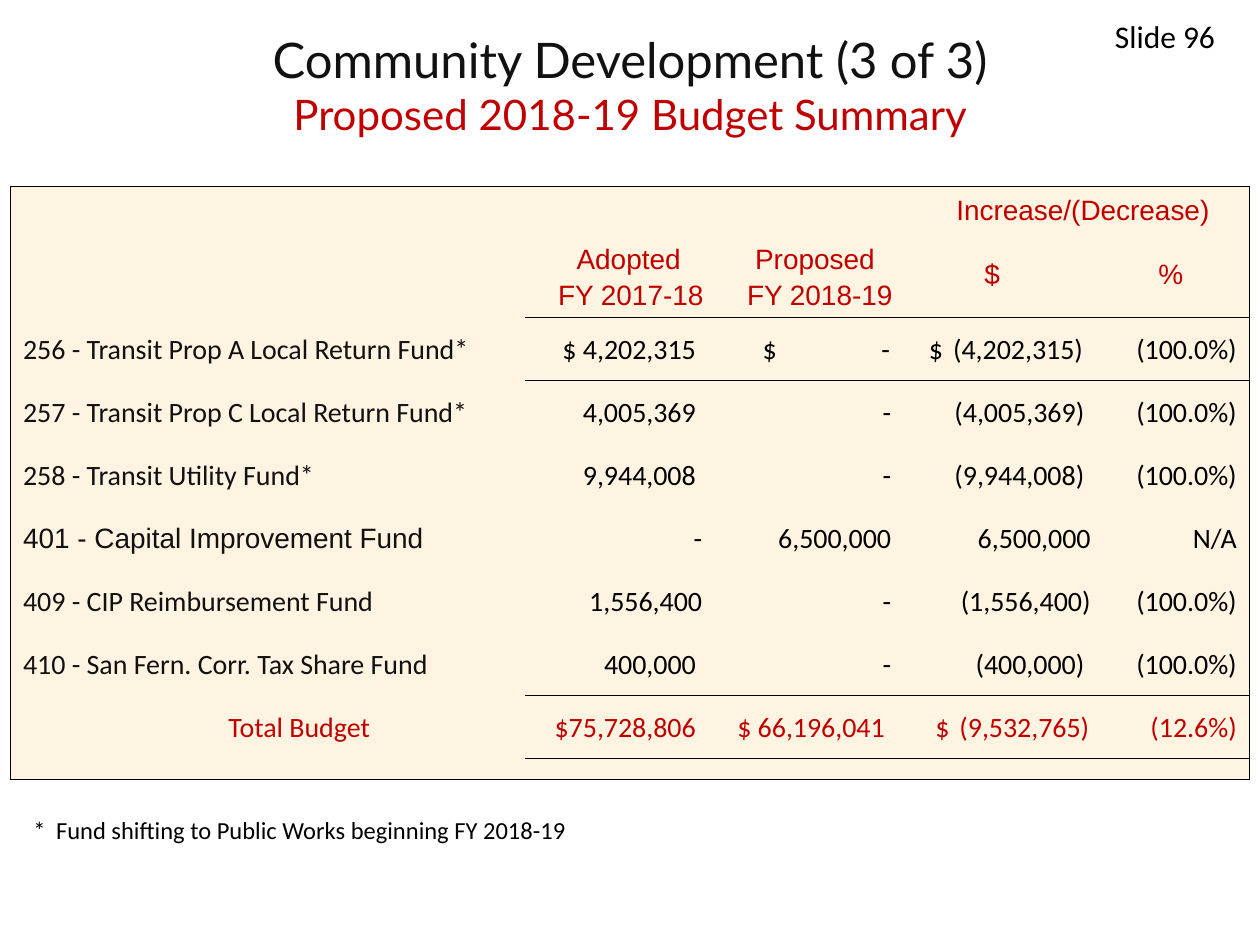
from dataclasses import dataclass

from lxml import etree
from pptx import Presentation, util as u
from pptx.dml.color import RGBColor
from pptx.enum import text
from pptx.oxml.ns import qn

AL = text.PP_ALIGN
MID, BOTTOM = text.MSO_ANCHOR.MIDDLE, text.MSO_ANCHOR.BOTTOM
NO_STYLE = "{2D5ABB26-0587-4C30-8999-92F81FD0307C}"


@dataclass(frozen=True)
class Theme:
    """Colours, fonts and type sizes of the slide."""
    ink: str = "111111"
    black: str = "000000"
    accent: str = "C00000"
    panel: str = "FFF3E1"
    head: str = "Lato"
    label: str = "Arial"
    body: str = "Calibri"
    title: int = 28
    subtitle: int = 24
    page: int = 18
    cell: int = 16
    note: int = 14
    spacer: int = 8


T = Theme()
COLS = [49, 17, 18, 19, 15]
ROWS = [4.4, 4.8] + [6] * 7 + [2]
RULED = {1, 7, 8}
FUNDS = [
    ("256 - Transit Prop A Local Return Fund*", "$ 4,202,315 ", "$\t-", "$\t(4,202,315) ", "(100.0%)"),
    ("257 - Transit Prop C Local Return Fund*", "4,005,369 ", "-", "(4,005,369) ", "(100.0%)"),
    ("258 - Transit Utility Fund*", "9,944,008 ", "-", "(9,944,008) ", "(100.0%)"),
    ("401 - Capital Improvement Fund", "-", "6,500,000", "6,500,000", "N/A"),
    ("409 - CIP Reimbursement Fund", "1,556,400", "-", "(1,556,400)", "(100.0%)"),
    ("410 - San Fern. Corr. Tax Share Fund", "400,000 ", "-", "(400,000) ", "(100.0%)"),
]
TOTAL = ("Total Budget", "$75,728,806 ", "$ 66,196,041 ", "$\t(9,532,765)", "(12.6%)")
SIGN_INSET = {(2, 2): 0.47, (2, 3): 0.29, (8, 3): 0.34}


def grid(n):
    """Length of n grid units, twelve to the inch."""
    return u.Emu(round(n * 76200))


def add_run(p, words, size, font, color):
    """Add one formatted run."""
    r = p.add_run()
    r.text = words
    r.font.size, r.font.name = u.Pt(size), font
    r.font.color.rgb = RGBColor.from_string(color)


def indent(p, left, first=0):
    """Indent a paragraph, in inches."""
    pPr = p._p.get_or_add_pPr()
    pPr.set("marL", str(u.Inches(left)))
    pPr.set("indent", str(u.Inches(first)))


def add_tab(p, pos, align):
    """Give a paragraph one tab stop, in inches."""
    tabs = etree.SubElement(p._p.get_or_add_pPr(), qn("a:tabLst"))
    etree.SubElement(tabs, qn("a:tab"), pos=str(u.Inches(pos)), algn=align)


def add_box(s, x, y, w, h):
    """Add a wrapping text box on the grid and return its frame."""
    tf = s.shapes.add_textbox(*map(grid, (x, y, w, h))).text_frame
    tf.word_wrap = True
    return tf


def set_insets(cell, *inches):
    """Set the left, top, right and bottom insets of a cell."""
    (cell.margin_left, cell.margin_top,
     cell.margin_right, cell.margin_bottom) = map(u.Inches, inches)


def set_borders(cell, sides):
    """Rule the named sides of a cell."""
    tcPr = cell._tc.get_or_add_tcPr()
    for side in sides:
        ln = etree.SubElement(tcPr, qn(f"a:ln{side}"), w="12700")
        fill = etree.SubElement(ln, qn("a:solidFill"))
        etree.SubElement(fill, qn("a:srgbClr"), val=T.black)


def style_cell(cell, i, j):
    """Fill a cell and rule it according to its place."""
    last, right = i + cell.span_height - 1, j + cell.span_width - 1
    rules = {"L": j == 0,
             "R": right == len(COLS) - 1,
             "T": i == 0 or (j > 0 and i - 1 in RULED),
             "B": last == len(ROWS) - 1 or (j > 0 and last in RULED)}
    set_borders(cell, [side for side, on in rules.items() if on])
    cell.fill.solid()
    cell.fill.fore_color.rgb = RGBColor.from_string(T.panel)


def add_headings(tbl):
    """Write the two header rows."""
    for j, (word, year) in enumerate([("Adopted", "FY 2017-18"), ("Proposed", "FY 2018-19")], 1):
        cell = tbl.cell(0, j)
        cell.vertical_anchor = BOTTOM
        set_insets(cell, 0.1, 0.05, 0, 0.05)
        p, q = cell.text_frame.paragraphs[0], cell.text_frame.add_paragraph()
        indent(p, 0.31)
        q.alignment, q.space_before = AL.RIGHT, u.Pt(3)
        add_run(p, word, T.cell, T.label, T.accent)
        add_run(q, year, T.cell, T.label, T.accent)
    for i, j, words, left in [(0, 3, "Increase/(Decrease)", 0.19), (1, 3, "$", 0), (1, 4, "%", 0)]:
        cell = tbl.cell(i, j)
        cell.vertical_anchor = MID if i else BOTTOM
        p = cell.text_frame.paragraphs[0]
        p.alignment = AL.CENTER
        indent(p, left)
        add_run(p, words, T.cell, T.label, T.accent)


def add_row(tbl, i, values, total=False):
    """Write a row of label, amounts and percentage."""
    for j, words in enumerate(values):
        cell = tbl.cell(i, j)
        cell.vertical_anchor = MID
        left = 0.1 if j == 0 and not total else SIGN_INSET.get((i, j), 0.01)
        set_insets(cell, left, 0.01, 0.1 if j == 4 else 0.01, 0)
        p = cell.text_frame.paragraphs[0]
        p.alignment = AL.RIGHT if j else AL.LEFT
        if "\t" in words:
            p.alignment = AL.LEFT
            add_tab(p, COLS[j] / 12 - left - 0.02, "r")
        if total and j == 0:
            p.alignment = AL.CENTER
            indent(p, 0.5)
        color = T.accent if total else T.black if j else T.ink
        font = T.label if words.startswith("401") else T.body
        add_run(p, words, T.cell, font, color)


def add_budget(s):
    """Add the budget table."""
    frame = s.shapes.add_table(len(ROWS), len(COLS), *map(grid, (1, 17.75, sum(COLS), sum(ROWS))))
    tbl = frame.table
    tbl.first_row = tbl.horz_banding = False
    tbl._tbl.tblPr.find(qn("a:tableStyleId")).text = NO_STYLE
    for col, w in zip(tbl.columns, COLS):
        col.width = grid(w)
    for row, h in zip(tbl.rows, ROWS):
        row.height = grid(h)
    for j in (1, 2):
        tbl.cell(0, j).merge(tbl.cell(1, j))
    tbl.cell(0, 3).merge(tbl.cell(0, 4))
    for i in range(len(ROWS)):
        for j in range(len(COLS)):
            style_cell(tbl.cell(i, j), i, j)
    add_headings(tbl)
    for i, values in enumerate(FUNDS, 2):
        add_row(tbl, i, values)
    add_row(tbl, 8, TOTAL, total=True)
    for cell in [tbl.cell(0, 0), tbl.cell(1, 0), *tbl.rows[9].cells]:
        set_insets(cell, 0, 0, 0, 0)
        end = cell.text_frame.paragraphs[0]._p.get_or_add_endParaRPr()
        end.set("sz", str(T.spacer * 100))


def main():
    """Build and save the slide."""
    prs = Presentation()
    prs.slide_width, prs.slide_height = grid(120), grid(90)
    s = prs.slides.add_slide(prs.slide_layouts[6])

    tf = add_box(s, 4, 4, 112, 8)
    tf.vertical_anchor = MID
    p = tf.paragraphs[0]
    p.alignment = AL.CENTER
    add_run(p, "Community Development (3 of 3)", T.title, T.head, T.ink)
    p.add_line_break()
    add_run(p, "Proposed 2018-19 Budget Summary", T.subtitle, T.head, T.accent)

    add_budget(s)

    p = add_box(s, 2, 77, 93, 4).paragraphs[0]
    indent(p, 0.18, -0.18)
    add_run(p, "*\tFund shifting to Public Works beginning FY 2018-19", T.note, T.body, T.black)

    p = add_box(s, 105, 1, 28, 6).paragraphs[0]
    add_run(p, "Slide 96", T.page, T.body, T.black)
    prs.save("out.pptx")


if __name__ == "__main__":
    main()
